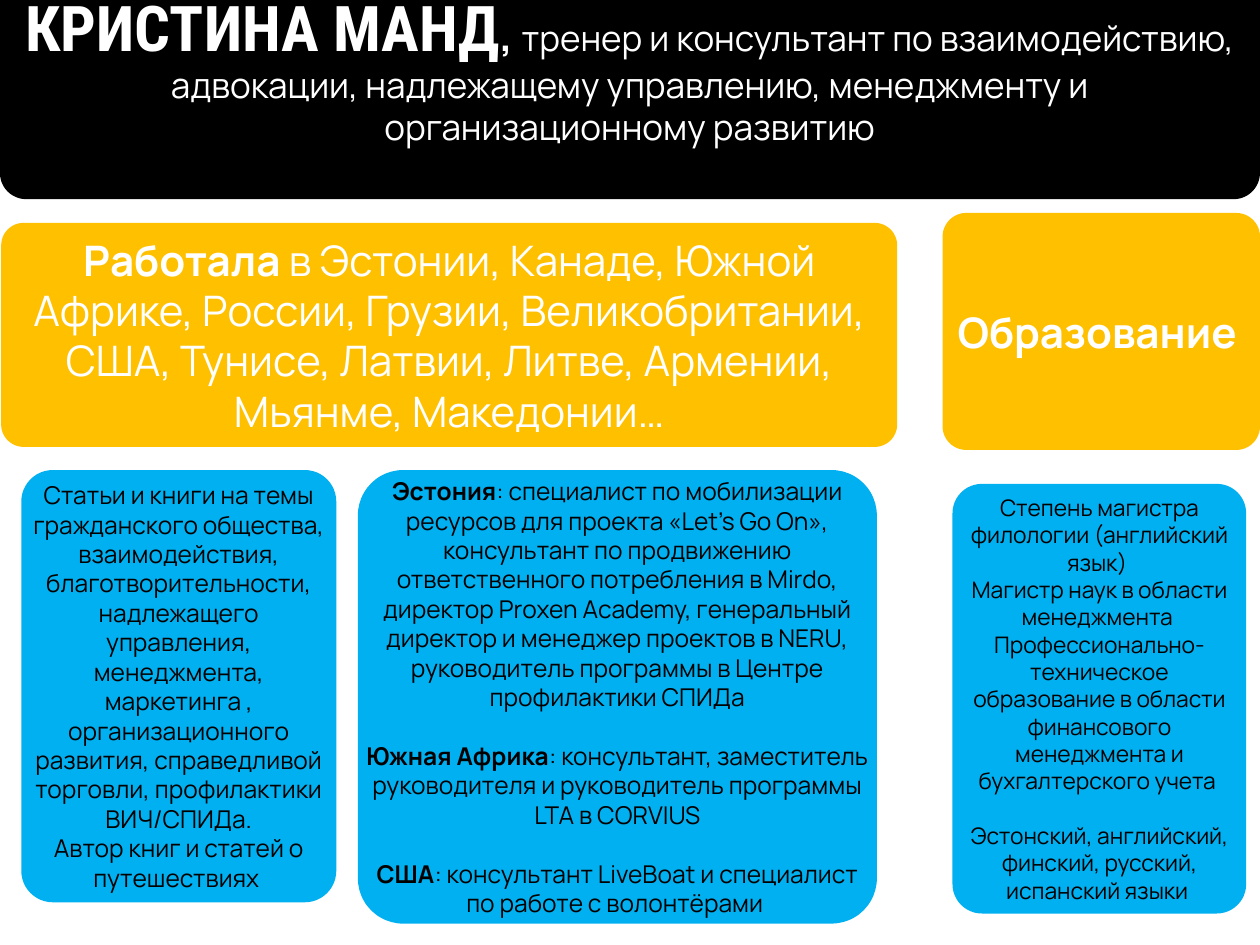
from pptx import Presentation
from pptx.dml.color import RGBColor
from pptx.enum import shapes, text
from pptx.util import Pt

BLACK = RGBColor(0x00, 0x00, 0x00)
WHITE = RGBColor(0xFF, 0xFF, 0xFF)
AMBER = RGBColor(0xFF, 0xC0, 0x00)
BLUE = RGBColor(0x00, 0xB0, 0xF0)


def add_text(paragraph, words, size, color, bold=False, font="Manrope"):
    """Append one formatted run to a paragraph."""
    run = paragraph.add_run()
    run.text = words
    run.font.name = font
    run.font.size = Pt(size)
    run.font.bold = bold
    run.font.color.rgb = color


def add_card(slide, box, fill, inset):
    """Draw a rounded card and return the frame of the text that spans it."""
    bounds = [Pt(side) for side in box]
    card = slide.shapes.add_shape(
        shapes.MSO_SHAPE.ROUNDED_RECTANGLE, *bounds)
    card.adjustments[0] = 0.1
    card.shadow.inherit = False
    card.fill.solid()
    card.fill.fore_color.rgb = fill
    card.line.fill.background()
    frame = slide.shapes.add_textbox(*bounds).text_frame
    frame.word_wrap = True
    frame.vertical_anchor = text.MSO_ANCHOR.MIDDLE
    frame.margin_left = frame.margin_right = Pt(inset)
    frame.margin_top = frame.margin_bottom = Pt(inset)
    return frame


def add_paragraph(frame, first, gap=0):
    """Return a centred paragraph with the given space before it."""
    paragraph = frame.paragraphs[0] if first else frame.add_paragraph()
    paragraph.alignment = text.PP_ALIGN.CENTER
    paragraph.space_before = Pt(gap)
    return paragraph


def add_header(slide, box, name, role):
    """Place the black banner with the trainer's name and role."""
    paragraph = add_paragraph(add_card(slide, box, BLACK, 10.8), True)
    add_text(paragraph, name, 36, WHITE, bold=True, font="Roboto Condensed")
    add_text(paragraph, ", ", 24, WHITE, bold=True)
    add_text(paragraph, role, 20, WHITE)


def add_heading(slide, box, lead, rest=""):
    """Place an amber heading card with a bold lead."""
    paragraph = add_paragraph(add_card(slide, box, AMBER, 7.2), True)
    add_text(paragraph, lead, 24, WHITE, bold=True)
    if rest:
        add_text(paragraph, rest, 24, WHITE)


def add_details(slide, box, size, inset, entries):
    """Place a blue card from entries of gap before, bold lead and text."""
    frame = add_card(slide, box, BLUE, inset)
    for index, (gap, lead, words) in enumerate(entries):
        paragraph = add_paragraph(frame, index == 0, gap)
        if lead:
            add_text(paragraph, lead, size, BLACK, bold=True)
        add_text(paragraph, words, size, BLACK)


ARTICLES = [
    (0, "", "Статьи и книги на темы гражданского общества, взаимодействия, "
     "благотворительности, надлежащего управления, менеджмента, маркетинга , "
     "организационного развития, справедливой торговли, профилактики "
     "ВИЧ/СПИДа."),
    (0, "", "Автор книг и статей о путешествиях "),
]
POSITIONS = [
    (0, "Эстония", ": специалист по мобилизации ресурсов для проекта "
     "«Let’s Go On», консультант по продвижению ответственного потребления "
     "в Mirdo, директор Proxen Academy, генеральный директор и менеджер "
     "проектов в NERU, руководитель программы в Центре профилактики СПИДа"),
    (16.8, "Южная Африка", ": консультант, заместитель руководителя и "
     "руководитель программы LTA в CORVIUS"),
    (16.8, "США", ": консультант LiveBoat и специалист по работе с "
     "волонтёрами "),
]
DEGREES = [
    (0, "", "Степень магистра филологии (английский язык) "),
    (0, "", "Магистр наук в области менеджмента "),
    (0, "", "Профессионально-техническое образование в области финансового "
     "менеджмента и бухгалтерского учета "),
    (15.6, "", "Эстонский, английский, финский, русский, испанский языки "),
]


def main():
    """Build the trainer profile slide."""
    deck = Presentation()
    deck.slide_width, deck.slide_height = Pt(720), Pt(540)
    slide = deck.slides.add_slide(deck.slide_layouts[6])
    add_header(slide, (0, -36, 720, 149.8), "КРИСТИНА МАНД",
               "тренер и консультант по взаимодействию, адвокации, надлежащему "
               "управлению, менеджменту и организационному развитию")
    add_heading(slide, (0.7, 127.4, 512, 128), "Работала ",
                "в Эстонии, Канаде, Южной Африке, России, Грузии, "
                "Великобритании, США, Тунисе, Латвии, Литве, Армении, "
                "Мьянме, Македонии…")
    add_details(slide, (12.2, 268.6, 180, 247), 14, 4.3, ARTICLES)
    add_details(slide, (204.5, 268.6, 296.6, 259.2), 14, 4.3, POSITIONS)
    add_heading(slide, (538.6, 121.7, 181.4, 135.4), "Образование ")
    add_details(slide, (544.3, 276.5, 167.8, 245.5), 13, 3.6, DEGREES)
    deck.save("out.pptx")


if __name__ == "__main__":
    main()
